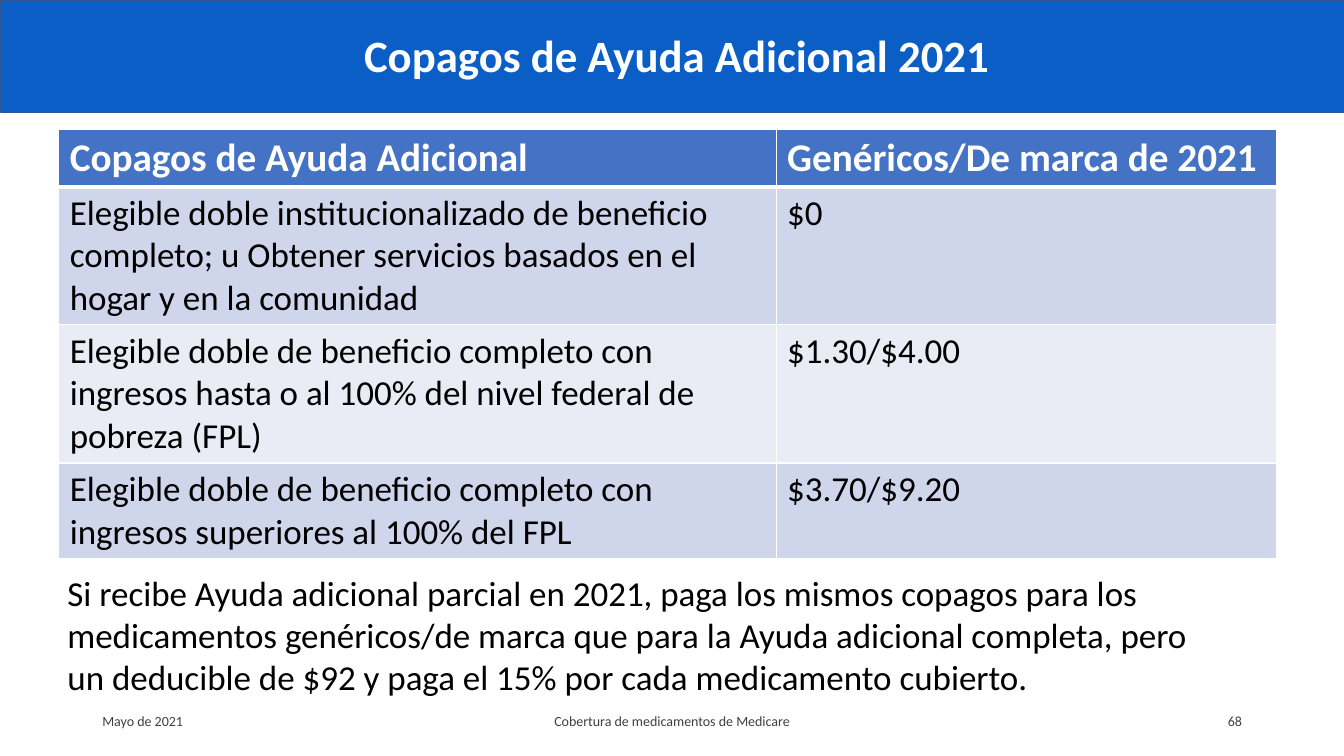
"""Build the slide on 2021 Extra Help copays."""
from pptx import Presentation
from pptx.dml.color import RGBColor
from pptx.enum.shapes import MSO_SHAPE
from pptx.enum.text import MSO_ANCHOR, PP_ALIGN
from pptx.oxml import parse_xml
from pptx.oxml.ns import nsdecls
from pptx.util import Cm, Pt

TITLE = "Copagos de Ayuda Adicional 2021"
ROWS = [
    ("Copagos de Ayuda Adicional", "Genéricos/De marca de 2021"),
    ("Elegible doble institucionalizado de beneficio completo; u Obtener "
     "servicios basados en el hogar y en la comunidad", "$0"),
    ("Elegible doble de beneficio completo con ingresos hasta o al 100% "
     "del nivel federal de pobreza (FPL)", "$1.30/$4.00"),
    ("Elegible doble de beneficio completo con ingresos superiores al "
     "100% del FPL", "$3.70/$9.20"),
]
NOTE = ("Si recibe Ayuda adicional parcial en 2021, paga los mismos copagos "
        "para los medicamentos genéricos/de marca que para la Ayuda adicional "
        "completa, pero \nun deducible de $92 y paga el 15% por cada "
        "medicamento cubierto.")
FOOT = [
    ("Mayo de 2021", 2.33, 7.62, PP_ALIGN.LEFT),
    ("Cobertura de medicamentos de Medicare", 11.22, 11.43, PP_ALIGN.CENTER),
    ("68", 23.93, 7.62, PP_ALIGN.RIGHT),
]
WIDTHS = (18.08, 12.6)
HEIGHTS = (1.44, 3.48, 3.48, 2.4)
BANDS = ("E9EBF5", "CFD5EA")
FONT = "Calibri"


def color(code):
    return RGBColor.from_string(code)


def write(frame, text, size, code, bold=False, align=PP_ALIGN.LEFT):
    para = frame.paragraphs[0]
    para.text = text
    para.alignment = align
    for run in para.runs:
        run.font.name = FONT
        run.font.size = Pt(size)
        run.font.bold = bold
        run.font.color.rgb = color(code)
    return para


def label(text, box, size, code, bold=False, align=PP_ALIGN.LEFT,
          anchor=MSO_ANCHOR.MIDDLE):
    frame = slide.shapes.add_textbox(*map(Cm, box)).text_frame
    frame.word_wrap = True
    frame.vertical_anchor = anchor
    return write(frame, text, size, code, bold, align)


def border(cell, side, width):
    cell._tc.get_or_add_tcPr().append(parse_xml(
        f'<a:ln{side} {nsdecls("a")} w="{Pt(width)}"><a:solidFill>'
        f'<a:srgbClr val="FFFFFF"/></a:solidFill></a:ln{side}>'))


deck = Presentation()
deck.slide_width, deck.slide_height = Cm(33.87), Cm(19.05)
slide = deck.slides.add_slide(deck.slide_layouts[6])

band = slide.shapes.add_shape(
    MSO_SHAPE.RECTANGLE, Cm(0.03), Cm(0), Cm(33.87), Cm(2.83))
band.shadow.inherit = False
band.fill.solid()
band.fill.fore_color.rgb = color("0A5EC6")
band.line.color.rgb = color("325491")
band.line.width = Pt(1)

for text, left, width, align in FOOT:
    label(text, (left, 17.65, width, 1.02), 10, "404040", align=align)
label(NOTE, (1.45, 14.27, 30.56, 3.73), 25, "000000", anchor=MSO_ANCHOR.TOP)

table = slide.shapes.add_table(
    len(ROWS), len(WIDTHS), Cm(1.48), Cm(3.26),
    Cm(sum(WIDTHS)), Cm(sum(HEIGHTS))).table
for col, width in zip(table.columns, WIDTHS):
    col.width = Cm(width)
for i, (row, height) in enumerate(zip(table.rows, HEIGHTS)):
    row.height = Cm(height)
    head = i == 0
    for cell, text in zip(row.cells, ROWS[i]):
        cell.margin_left = cell.margin_right = Cm(0.28)
        cell.margin_top = cell.margin_bottom = Cm(0.13)
        for side in "LRTB":
            thick = (head and side == "B") or (i == 1 and side == "T")
            border(cell, side, 3 if thick else 1)
        cell.fill.solid()
        cell.fill.fore_color.rgb = color("4472C4" if head else BANDS[i % 2])
        write(cell.text_frame, text, 28 if head else 25,
              "FFFFFF" if head else "000000", head)

title = label(TITLE, (0.97, 0.03, 32.18, 2.84), 32, "FFFFFF", True,
              PP_ALIGN.CENTER)
title.line_spacing = 0.9

deck.save("out.pptx")
